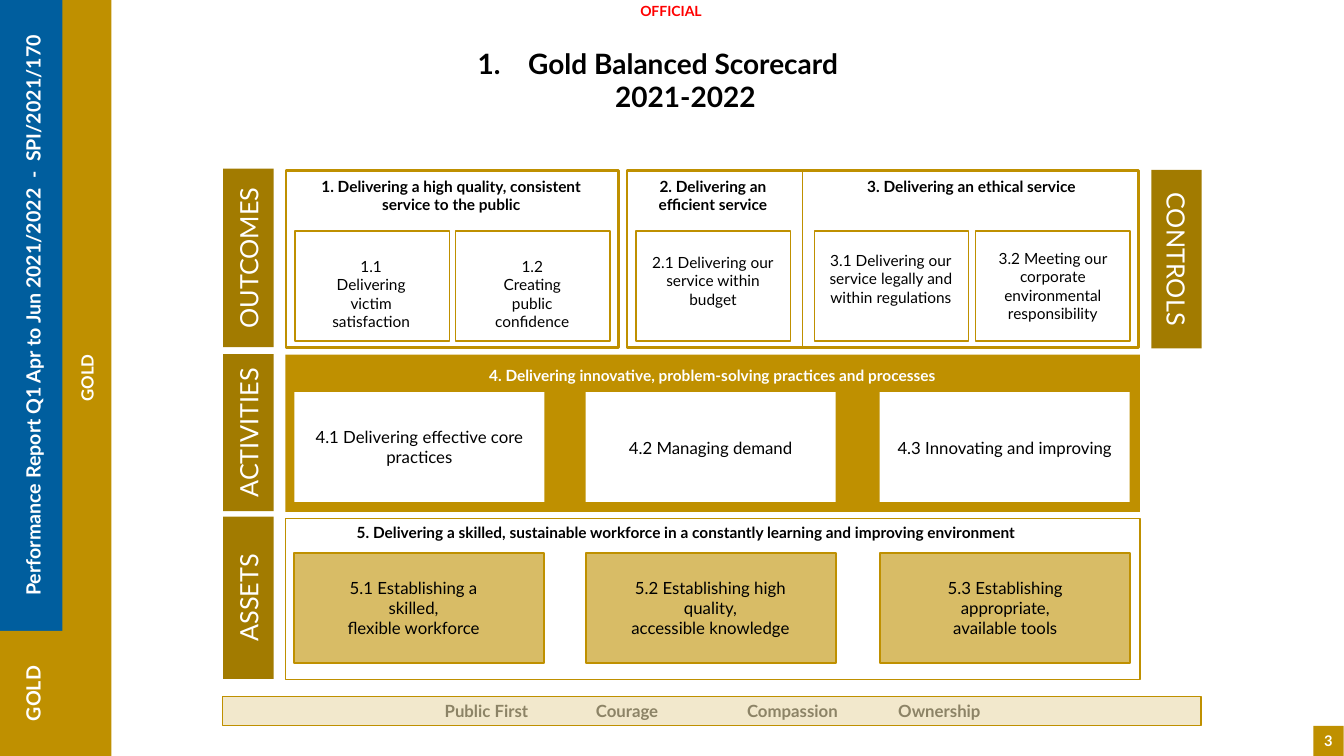
from pptx import Presentation
from pptx.dml.color import RGBColor
from pptx.enum.shapes import MSO_CONNECTOR as Connector, MSO_SHAPE as Preset
from pptx.enum.text import MSO_ANCHOR as Anchor, PP_ALIGN as Align
from pptx.oxml.ns import qn
from pptx.util import Cm, Pt
from lxml.etree import SubElement

GOLD, DARK_GOLD, BLUE = "BF9000", "A27B00", "005E9E"
WHITE, BLACK, GREY, RED = "FFFFFF", "000000", "808080", "FF0000"


def rgb(code):
    return RGBColor.from_string(code)


class Scorecard:
    font = "Lato"

    def __init__(self, slide):
        self.slide = slide

    def fill_text(self, frame, text, size, color, bold, align=Align.CENTER):
        frame.text = text
        for paragraph in frame.paragraphs:
            paragraph.alignment = align
            for run in paragraph.runs:
                run.font.name = self.font
                run.font.size = Pt(size)
                run.font.bold = bold
                run.font.color.rgb = rgb(color)

    def box(self, x, y, w, h, fill=None, opacity=100, line=0):
        """Rectangle; line is the width in points of a gold outline."""
        box = self.slide.shapes.add_shape(Preset.RECTANGLE, Cm(x), Cm(y), Cm(w), Cm(h))
        box.shadow.inherit = False
        if fill:
            box.fill.solid()
            box.fill.fore_color.rgb = rgb(fill)
            if opacity < 100:
                color = box._element.spPr.find(qn("a:solidFill"))[0]
                SubElement(color, qn("a:alpha")).set("val", str(opacity * 1000))
        else:
            box.fill.background()
        if line:
            box.line.color.rgb = rgb(GOLD)
            box.line.width = Pt(line)
        else:
            box.line.fill.background()
        return box

    def label(self, x, y, w, h, fill, text, size, bold=True, upward=False):
        """Filled rectangle with centred white text."""
        label = self.box(x, y, w, h, fill)
        frame = label.text_frame
        frame.margin_left = frame.margin_right = 0
        frame.vertical_anchor = Anchor.MIDDLE
        if upward:
            frame._txBody.bodyPr.set("vert", "vert270")
        self.fill_text(frame, text, size, WHITE, bold)
        return label

    def side_label(self, center_x, center_y, length, text, rotation=270):
        thickness = 1.27
        label = self.label(center_x - length / 2, center_y - thickness / 2,
                           length, thickness, DARK_GOLD, text, 18, bold=False)
        label.rotation = rotation

    def text(self, x, y, w, h, text, size=11, color=BLACK, bold=False,
             align=Align.CENTER, wrap=True):
        frame = self.slide.shapes.add_textbox(Cm(x), Cm(y), Cm(w), Cm(h)).text_frame
        frame.word_wrap = wrap
        self.fill_text(frame, text, size, color, bold, align)
        return frame

    def numbered_title(self, x, y, w, h, text):
        first = self.text(x, y, w, h, text, 20, bold=True).paragraphs[0]
        first.alignment = Align.LEFT
        properties = first._p.get_or_add_pPr()
        properties.set("marL", str(Cm(1.27)))
        properties.set("indent", str(-Cm(1.27)))
        SubElement(properties, qn("a:buFont")).set("typeface", "+mj-lt")
        SubElement(properties, qn("a:buAutoNum")).set("type", "arabicPeriod")

    def divider(self, x, top, bottom):
        divider = self.slide.shapes.add_connector(
            Connector.STRAIGHT, Cm(x), Cm(top), Cm(x), Cm(bottom))
        divider.line.color.rgb = rgb(GOLD)
        divider.line.width = Pt(0.75)
        SubElement(divider._element.spPr, qn("a:effectLst"))


def build_frame(card):
    card.text(14.94, -0.05, 3.94, 0.69, "OFFICIAL", 10, RED, True)
    card.label(0, 0, 1.65, 15.9, BLUE,
               "Performance Report Q1 Apr to Jun 2021/2022  -  SPI/2021/170",
               14, upward=True)
    card.label(0, 15.9, 1.65, 3.15, GOLD, "GOLD", 14, upward=True)
    card.label(1.57, 0, 1.24, 19.05, GOLD, "GOLD", 12, upward=True)
    card.label(33.1, 18.29, 0.76, 0.76, GOLD, "3", 10.5)
    card.numbered_title(11.79, 1.04, 10.97, 1.96, "Gold Balanced Scorecard\n2021-2022")


def build_outcomes(card):
    for x, width in ((7.21, 8.38), (15.8, 12.9)):
        card.box(x, 4.29, width, 4.47, line=2)
    card.divider(20.22, 4.29, 8.74)
    for x, width, heading in (
        (7.21, 8.33, "1. Delivering a high quality, consistent service to the public"),
        (15.8, 4.34, "2. Delivering an\nefficient service"),
        (20.32, 8.33, "3. Delivering an ethical service"),
    ):
        card.text(x, 4.33, width, 1.19, heading, bold=True)

    for card_x, x, y, width, wrap, outcome in (
        (7.44, 7.92, 6.35, 2.87, True, "1.1 Delivering\nvictim\nsatisfaction"),
        (11.48, 12.12, 6.35, 2.59, True, "1.2 Creating\npublic\nconfidence"),
        (16.03, 16.13, 6.25, 3.68, False, "2.1 Delivering our\nservice within\nbudget"),
        (20.52, 20.6, 6.2, 3.71, False,
         "3.1 Delivering our\nservice legally and\nwithin regulations"),
        (24.59, 24.21, 6.15, 4.65, True,
         "3.2 Meeting our corporate environmental responsibility"),
    ):
        card.box(card_x, 5.82, 3.89, 2.77, WHITE, line=1)
        card.text(x, y, width, 1.68, outcome, wrap=wrap)


def build_activities_and_assets(card):
    card.box(7.19, 8.94, 21.54, 3.96, GOLD)
    card.text(11.61, 9.09, 12.7, 0.74,
              "4. Delivering innovative, problem-solving practices and processes",
              color=WHITE, bold=True)
    card.box(7.19, 13.06, 21.54, 4.06, line=1)
    card.text(8.74, 13.06, 18.42, 0.74,
              "5. Delivering a skilled, sustainable workforce in a constantly "
              "learning and improving environment",
              bold=True, align=Align.LEFT, wrap=False)

    for x, activity_y, activity, asset_x, asset_width, asset in (
        (7.42, 10.62, "4.1 Delivering effective core practices",
         7.95, 4.95, "5.1 Establishing a skilled,\nflexible workforce"),
        (14.76, 10.9, "4.2 Managing demand",
         15.16, 5.49, "5.2 Establishing high quality,\naccessible knowledge"),
        (22.17, 10.9, "4.3 Innovating and improving",
         22.58, 5.51, "5.3 Establishing appropriate,\navailable tools"),
    ):
        card.box(x, 9.88, 6.3, 2.77, WHITE)
        card.text(x, activity_y, 6.3, 0.76, activity, 12)
        card.box(x, 13.94, 6.3, 2.77, GOLD, opacity=60, line=1.5)
        card.text(asset_x, 14.43, asset_width, 1.8, asset, 12)


def build_borders(card):
    card.side_label(6.26, 6.5, 4.5, "OUTCOMES")
    card.side_label(6.26, 10.9, 3.96, "ACTIVITIES")
    card.side_label(6.26, 15.06, 4.09, "ASSETS")
    card.side_label(29.65, 6.53, 4.5, "CONTROLS", rotation=90)
    values = ("Public First", "Courage", "Compassion", "Ownership")
    card.text(5.77, 17.53, 24.38, 0.76, "\t\t".join(values), 12, GREY, True)
    card.box(5.61, 17.55, 24.66, 0.74, GOLD, opacity=20, line=1)


def main():
    deck = Presentation()
    deck.slide_width, deck.slide_height = Cm(33.87), Cm(19.05)
    card = Scorecard(deck.slides.add_slide(deck.slide_layouts[6]))
    build_frame(card)
    build_outcomes(card)
    build_activities_and_assets(card)
    build_borders(card)
    deck.save("out.pptx")


if __name__ == "__main__":
    main()
